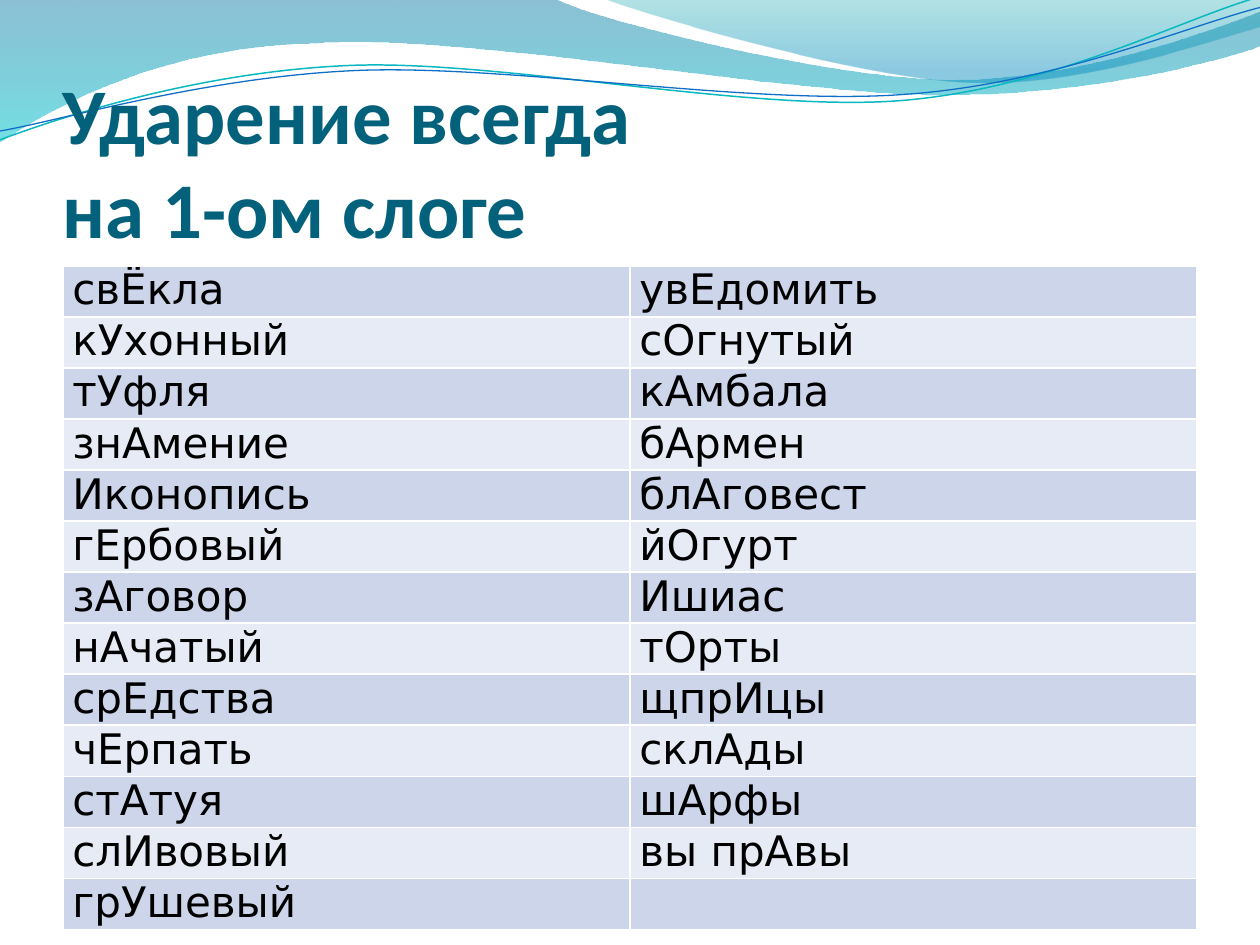
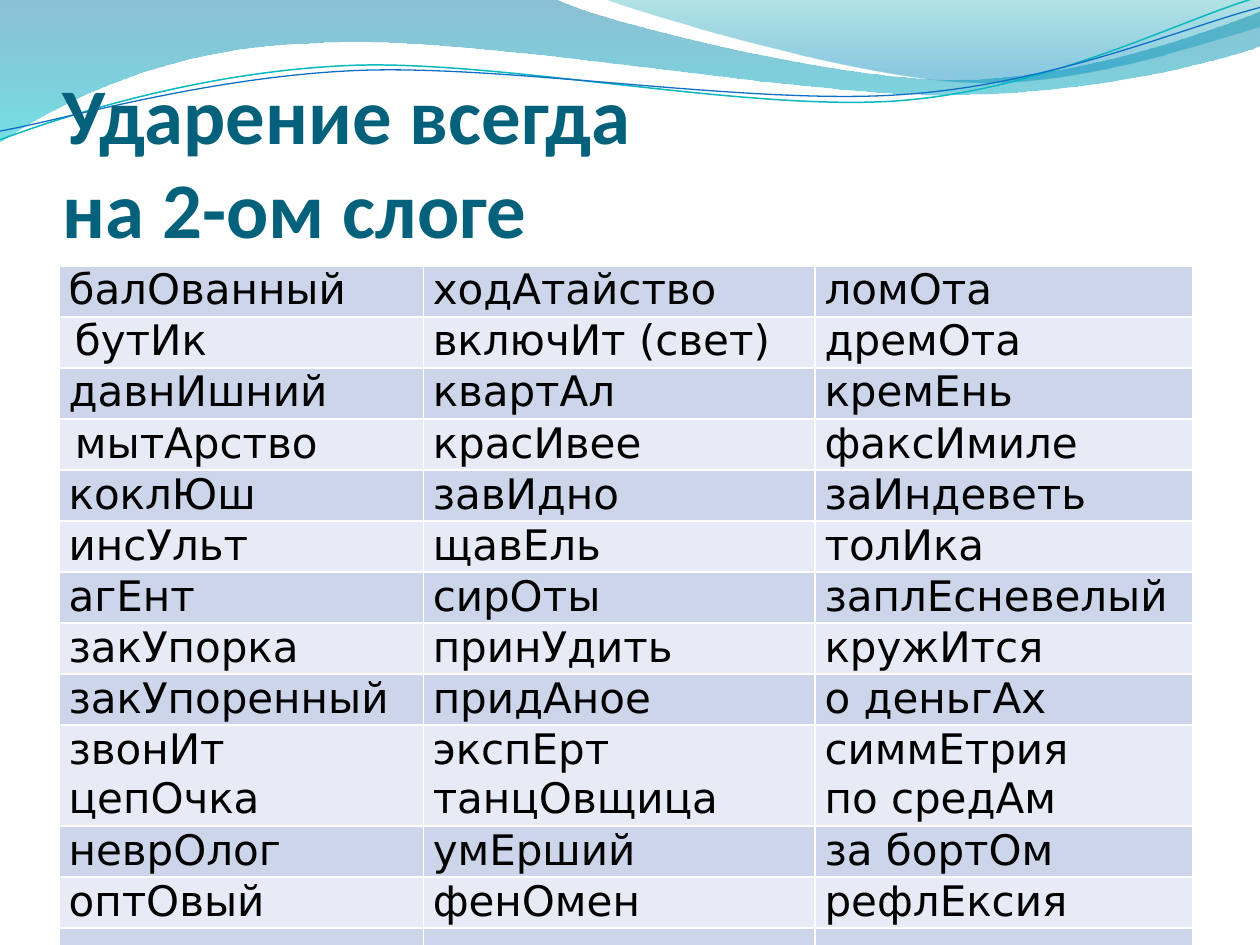
from math import cos, radians, sin

from pptx import Presentation
from pptx.dml.color import RGBColor
from pptx.enum.text import MSO_ANCHOR, PP_ALIGN
from pptx.oxml import parse_xml
from pptx.oxml.ns import nsdecls, qn
from pptx.util import Inches, Pt

LOW = MSO_ANCHOR.BOTTOM
JUST = PP_ALIGN.JUSTIFY

THEME = {
    "title": ("Calibri", 45, "04617B", True),
    "word": ("DejaVu Sans", 24, "000000", False),
    "bands": ("CCD5EA", "E7EBF5"),
    "rule": ("FFFFFF", 1),
    "wide": [(0, "0074A1", 45), (100, "00C6CF", 55)],
    "crest": [(0, "00A1A9", 30), (80, "008BBF", 45)],
    "teal": ("0AB8BF", 0.85),
    "blue": ("0F6FC6", 0.75),
}

SIZE = (10, 7.5)
TITLE = (0.5, 0.77, 9, 1.25)
ROWS = 13
ROW = 5.27 / ROWS
PAD = 5.4
TILT = 357.3

PAGES = [
    {
        "title": ("Ударение всегда ", "на 1-ом слоге"),
        "at": (0.5, 2.11),
        "tall": 5.27,
        "cols": (4.5, 4.5),
        "words": [
            ["свЁкла", "кУхонный", "тУфля", "знАмение", "Иконопись", "гЕрбовый",
             "зАговор", "нАчатый", "срЕдства", "чЕрпать", "стАтуя", "слИвовый",
             "грУшевый"],
            ["увЕдомить", "сОгнутый", "кАмбала", "бАрмен", "блАговест", "йОгурт",
             "Ишиас", "тОрты", "щпрИцы", "склАды", "шАрфы", "вы прАвы"],
        ],
        "inset": {},
    },
    {
        "title": ("Ударение всегда ", "на 2-ом слоге"),
        "at": (0.47, 2.11),
        "tall": 5.67,
        "cols": (2.89, 3.11, 3),
        "words": [
            ["балОванный", "бутИк", "давнИшний", "мытАрство", "коклЮш", "инсУльт",
             "агЕнт", "закУпорка", "закУпоренный", "звонИт \nцепОчка", "неврОлог",
             "оптОвый"],
            ["ходАтайство", "включИт (свет)", "квартАл", "красИвее", "завИдно",
             "щавЕль", "сирОты", "принУдить", "придАное", "экспЕрт\nтанцОвщица",
             "умЕрший", "фенОмен"],
            ["ломОта", "дремОта", "кремЕнь", "факсИмиле ", "заИндеветь", "толИка",
             "заплЕсневелый", "кружИтся", "о деньгАх", "симмЕтрия\nпо средАм",
             "за бортОм", "рефлЕксия"],
        ],
        "inset": {"бутИк": 0.05, "мытАрство": 0.05},
    },
]

FILLS = [
    ("wide", (0, 0), [
        (4.4, -0.01),
        (4.76, 0.17, 6.64, 0.63, 7.58, 0.63),
        (8.53, 0.63, 9.58, 0.26, 10, 0.09),
        (10.01, 0.36),
        (9.83, 0.44, 8.7, 0.76, 7.46, 0.75),
        (6.22, 0.75, 3.82, 0.28, 2.57, 0.34),
        (1.29, 0.36, 0.46, 0.83, -0.01, 1.13),
        (0, 0)]),
    ("crest", (4.79, -0.01), [
        (5.09, 0.11, 6.82, 0.62, 7.69, 0.65),
        (8.56, 0.69, 9.61, 0.32, 10, 0.21),
        (10, 0),
        (4.79, -0.01)]),
]
LINES = [
    ("teal", (0, 1.11), [
        (0.48, 0.93, 1.58, 0.57, 2.77, 0.52),
        (3.95, 0.47, 5.93, 0.89, 7.13, 0.8),
        (8.33, 0.71, 9.38, 0.15, 9.98, -0.02)]),
    ("blue", (0, 1.04), [
        (0.47, 0.96, 1.64, 0.61, 2.83, 0.56),
        (4.03, 0.51, 5.97, 0.84, 7.17, 0.75),
        (8.36, 0.67, 9.41, 0.21, 10, 0.06)]),
]


def rgb(hue):
    return RGBColor.from_string(hue)


def turn(x, y, angle):
    a = radians(angle)
    return x * cos(a) - y * sin(a), x * sin(a) + y * cos(a)


def bend(shape, legs):
    marks = iter(list(shape._element.iter(qn("a:lnTo"))))
    for leg in legs:
        first = next(marks)
        if len(leg) == 6:
            curve = parse_xml(f'<a:cubicBezTo {nsdecls("a")}/>')
            first.addprevious(curve)
            for mark in (first, next(marks), next(marks)):
                curve.append(mark[0])
                mark.getparent().remove(mark)


def outline(slide, start, legs, close, tilt=0):
    spots = [start] + [leg[i:i + 2] for leg in legs for i in range(0, len(leg), 2)]
    spots = [tuple(map(Inches, turn(x, y, -tilt))) for x, y in spots]
    pen = slide.shapes.build_freeform(*spots[0])
    pen.add_line_segments(spots[1:], close=close)
    shape = pen.convert_to_shape()
    bend(shape, legs)
    half, rise = shape.width / 2, shape.height / 2
    x, y = turn(shape.left + half, shape.top + rise, tilt)
    shape.left, shape.top = round(x - half), round(y - rise)
    shape.rotation = tilt
    shape.shadow.inherit = False
    shape.fill.background()
    return shape


def shade(shape, stops):
    marks = "".join(
        f'<a:gs pos="{pos * 1000}"><a:srgbClr val="{hue}">'
        f'<a:alpha val="{alpha * 1000}"/></a:srgbClr></a:gs>'
        for pos, hue, alpha in stops)
    grad = parse_xml(
        f'<a:gradFill {nsdecls("a")} rotWithShape="1"><a:gsLst>{marks}</a:gsLst>'
        '<a:lin ang="5400000" scaled="0"/></a:gradFill>')
    props = shape._element.spPr
    props.replace(props.find(qn("a:noFill")), grad)


def waves(slide):
    for key, start, legs in FILLS:
        shape = outline(slide, start, legs, True)
        shade(shape, THEME[key])
        shape.line.fill.background()
    for key, start, legs in LINES:
        shape = outline(slide, start, legs, False, TILT)
        hue, width = THEME[key]
        shape.line.color.rgb = rgb(hue)
        shape.line.width = Pt(width)


def write(para, text, style):
    run = para.add_run()
    run.text = text
    face, size, hue, bold = THEME[style]
    run.font.name = face
    run.font.size = Pt(size)
    run.font.bold = bold
    run.font.color.rgb = rgb(hue)


def head(slide, lines):
    frame = slide.shapes.add_textbox(*map(Inches, TITLE)).text_frame
    frame.word_wrap = True
    frame.vertical_anchor = LOW
    frame.margin_left = frame.margin_right = frame.margin_bottom = 0
    para = frame.paragraphs[0]
    for n, line in enumerate(lines):
        if n:
            para.add_line_break()
        write(para, line, "title")


def edge(cell):
    hue, width = THEME["rule"]
    props = cell._tc.get_or_add_tcPr()
    for n, side in enumerate("LRTB"):
        props.insert(n, parse_xml(
            f'<a:ln{side} {nsdecls("a")} w="{Pt(width)}"><a:solidFill>'
            f'<a:srgbClr val="{hue}"/></a:solidFill></a:ln{side}>'))


def fill(cell, text, band, inset):
    cell.margin_left = cell.margin_right = Pt(PAD)
    cell.margin_top = cell.margin_bottom = 0
    cell.fill.solid()
    cell.fill.fore_color.rgb = rgb(band)
    edge(cell)
    frame = cell.text_frame
    for n, line in enumerate(text.split("\n") if text else []):
        para = frame.add_paragraph() if n else frame.paragraphs[0]
        para.alignment = JUST
        if inset:
            para._p.get_or_add_pPr().set("indent", str(Inches(inset)))
        write(para, line, "word")


def grid(slide, page):
    cols = page["cols"]
    left, top = page["at"]
    frame = slide.shapes.add_table(
        ROWS, len(cols), Inches(left), Inches(top),
        Inches(sum(cols)), Inches(ROW * ROWS))
    table = frame.table
    table.first_row = table.horz_banding = False
    for row in table.rows:
        row.height = Inches(ROW)
    for c, (width, words) in enumerate(zip(cols, page["words"])):
        table.columns[c].width = Inches(width)
        for r in range(ROWS):
            text = words[r] if r < len(words) else ""
            fill(table.cell(r, c), text, THEME["bands"][r % 2],
                 page["inset"].get(text))
    frame.height = Inches(page["tall"])


def main():
    deck = Presentation()
    deck.slide_width, deck.slide_height = map(Inches, SIZE)
    for page in PAGES:
        slide = deck.slides.add_slide(deck.slide_layouts[6])
        waves(slide)
        head(slide, page["title"])
        grid(slide, page)
    deck.save("out.pptx")


if __name__ == "__main__":
    main()
